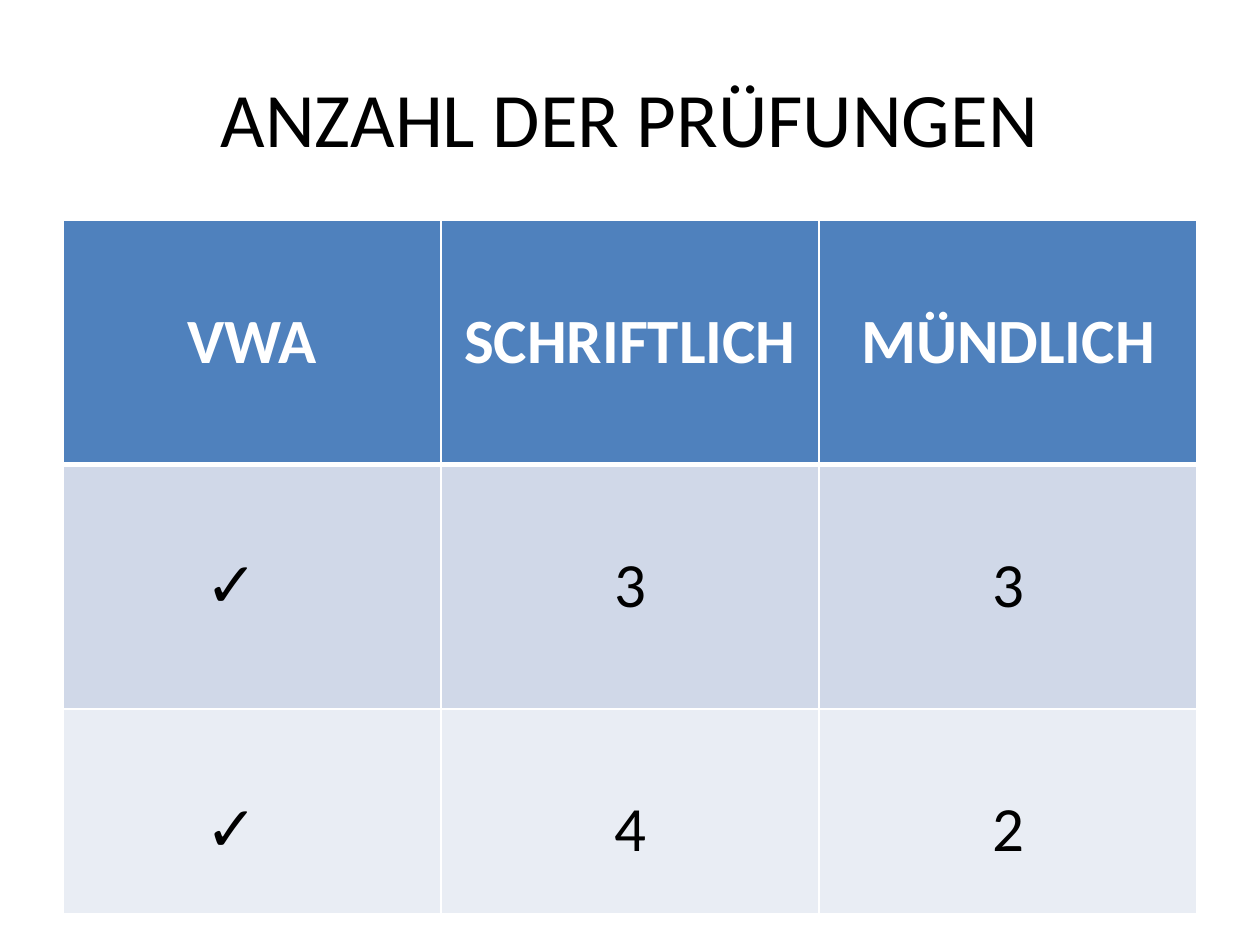
from lxml import etree
from pptx import Presentation
from pptx.dml.color import RGBColor
from pptx.enum.text import MSO_ANCHOR, PP_ALIGN
from pptx.oxml.ns import qn
from pptx.util import Cm, Pt

CENTER = PP_ALIGN.CENTER
MIDDLE, TOP = MSO_ANCHOR.MIDDLE, MSO_ANCHOR.TOP
COLORS = {"black": "000000", "white": "FFFFFF", "header": "4F81BD",
          "band_dark": "D0D8E8", "band_light": "E9EDF4"}
FONT = "Calibri"
CHECK = "✓"
EXAMS = [("VWA", "SCHRIFTLICH", "MÜNDLICH"),
         (CHECK, "3", "3"),
         (CHECK, "4", "2")]
ROW_FILLS = ["header", "band_dark", "band_light"]
ROW_HEIGHTS = [4.91, 4.93, 4.13]


def write(frame, text, color, **font_values):
    para = frame.paragraphs[0]
    para.alignment = CENTER
    span = para.add_run()
    span.text = text
    for name, value in {"name": FONT, **font_values}.items():
        setattr(span.font, name, value)
    span.font.color.rgb = RGBColor.from_string(COLORS[color])


def add_title(page, left, top, width, height):
    box = page.shapes.add_textbox(Cm(left), Cm(top), Cm(width), Cm(height))
    frame = box.text_frame
    frame.word_wrap = True
    frame.vertical_anchor = MIDDLE
    write(frame, "ANZAHL DER PRÜFUNGEN", "black", size=Pt(44))


def set_borders(cell, **widths):
    """Draw white borders; widths in points, keyed L, R, T and B."""
    properties = cell._tc.get_or_add_tcPr()
    for side, width in widths.items():
        line = etree.SubElement(properties, qn(f"a:ln{side}"), w=str(Pt(width)))
        fill = etree.SubElement(line, qn("a:solidFill"))
        etree.SubElement(fill, qn("a:srgbClr"), val=COLORS["white"])


def set_check_bullet(para):
    properties = para._p.get_or_add_pPr()
    indent = Cm(1.59)
    properties.set("marL", str(indent))
    properties.set("indent", str(-indent))
    etree.SubElement(properties, qn("a:buFont"), typeface=FONT)
    etree.SubElement(properties, qn("a:buChar"), char=CHECK)


def add_exam_table(page, left, top, width):
    columns = len(EXAMS[0])
    table = page.shapes.add_table(len(EXAMS), columns, Cm(left), Cm(top),
                                  Cm(width), Cm(sum(ROW_HEIGHTS))).table
    for column in table.columns:
        column.width = Cm(width / columns)
    for r, texts in enumerate(EXAMS):
        table.rows[r].height = Cm(ROW_HEIGHTS[r])
        header = r == 0
        for c, text in enumerate(texts):
            cell = table.cell(r, c)
            set_borders(cell, L=1, R=1, T=3 if r == 1 else 1, B=3 if header else 1)
            cell.fill.solid()
            cell.fill.fore_color.rgb = RGBColor.from_string(COLORS[ROW_FILLS[r]])
            cell.vertical_anchor = TOP
            cell.margin_top = Cm(1.67)
            checked = text == CHECK
            # A bullet needs a character to stand beside.
            write(cell.text_frame, " " if checked else text,
                  "white" if header else "black", size=Pt(36), bold=header)
            if checked:
                set_check_bullet(cell.text_frame.paragraphs[0])


def main():
    deck = Presentation()
    deck.slide_width, deck.slide_height = Cm(25.4), Cm(19.05)
    page = deck.slides.add_slide(deck.slide_layouts[6])
    add_title(page, 1.27, 0.76, 22.86, 3.18)
    add_exam_table(page, 1.27, 4.45, 22.86)
    deck.save("out.pptx")


if __name__ == "__main__":
    main()
